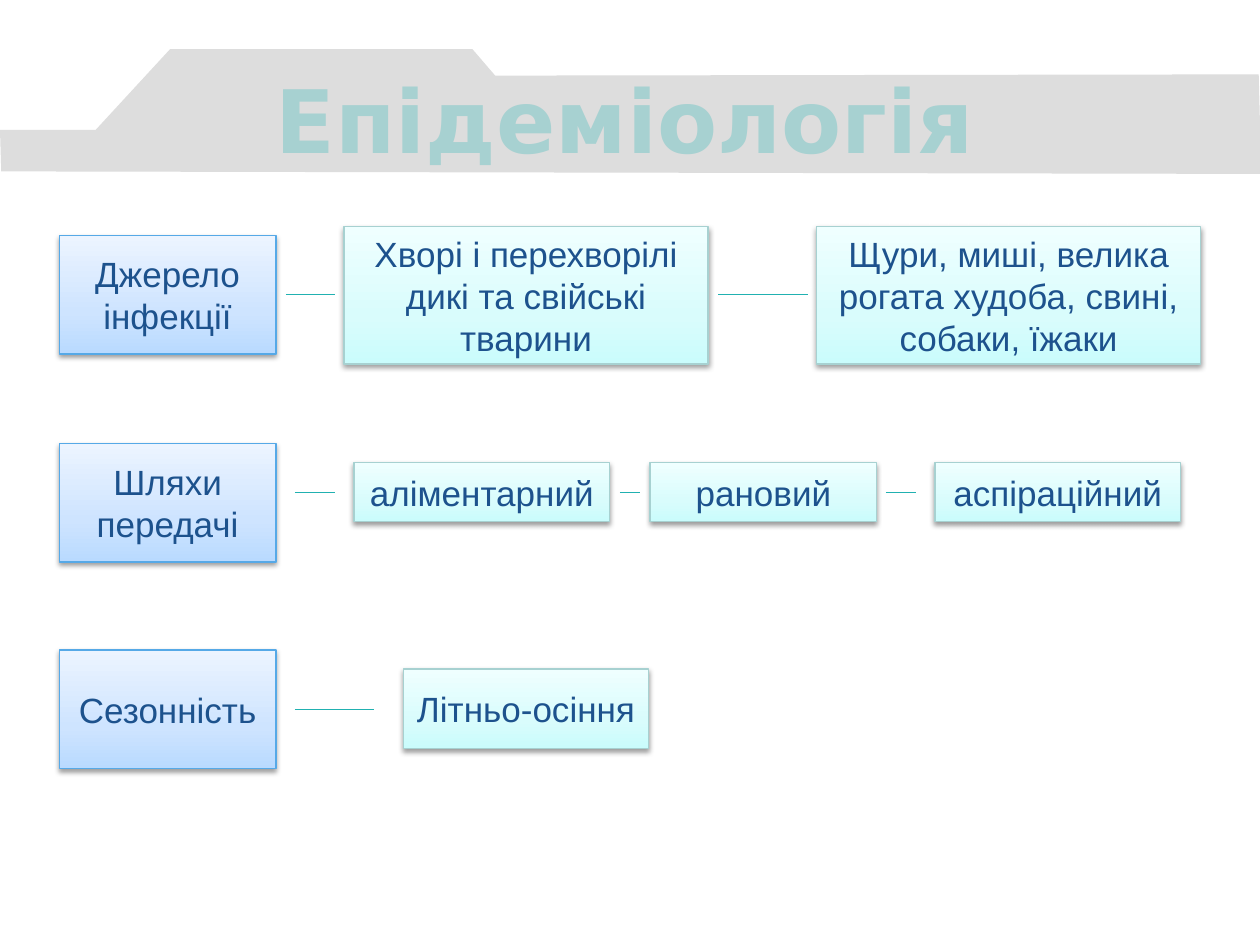
from lxml import etree
from pptx import Presentation
from pptx.dml.color import RGBColor
from pptx.enum.shapes import MSO_CONNECTOR, MSO_SHAPE
from pptx.enum.text import MSO_ANCHOR, MSO_AUTO_SIZE, PP_ALIGN
from pptx.oxml import parse_xml
from pptx.oxml.ns import nsdecls, qn
from pptx.util import Inches, Pt

COLORS = {
    "band": "DDDDDD",
    "title": "A7D1D1",
    "text": "1D528D",
    "link": "21B1B1",
}
# Border, then the gradient stops from bottom to top
TOPIC = ("56A9E7", {0: "B9DAFF", 35: "CEE4FF", 100: "ECF4FF"})
DETAIL = ("A7D1D1", {0: "CAFCFC", 35: "D9FCFC", 100: "EFFFFF"})


def write(frame, text, font_name, size, color, bold=False):
    frame.word_wrap = True
    frame.auto_size = MSO_AUTO_SIZE.NONE
    frame.vertical_anchor = MSO_ANCHOR.MIDDLE
    paragraph = frame.paragraphs[0]
    paragraph.alignment = PP_ALIGN.CENTER
    run = paragraph.add_run()
    run.text = text
    run.font.name = font_name
    run.font.size = Pt(size)
    run.font.bold = bold
    run.font.color.rgb = RGBColor.from_string(color)


def add_card(text, left, top, width, height, style):
    border, stops = style
    card = slide.shapes.add_shape(
        MSO_SHAPE.RECTANGLE, Inches(left), Inches(top), Inches(width), Inches(height))
    stop_xml = "".join(
        f'<a:gs pos="{position * 1000}"><a:srgbClr val="{color}"/></a:gs>'
        for position, color in stops.items())
    properties = card._element.spPr
    properties.append(parse_xml(
        f'<a:gradFill {nsdecls("a")} rotWithShape="1"><a:gsLst>{stop_xml}</a:gsLst>'
        '<a:lin ang="16200000" scaled="0"/></a:gradFill>'))
    card.line.color.rgb = RGBColor.from_string(border)
    card.line.width = Pt(0.75)
    # Soft shadow straight below
    card.shadow.inherit = False
    properties.find(qn("a:effectLst")).append(parse_xml(
        f'<a:outerShdw {nsdecls("a")} blurRad="{Pt(3.1)}" dist="{Pt(1.6)}" '
        'dir="5400000" rotWithShape="0"><a:srgbClr val="000000">'
        '<a:alpha val="38000"/></a:srgbClr></a:outerShdw>'))
    write(card.text_frame, text, "Arial", 20, COLORS["text"])


prs = Presentation()
prs.slide_width, prs.slide_height = Inches(10), Inches(7.5)
slide = prs.slides.add_slide(prs.slide_layouts[5])

# Header band, behind the title
outline = [(0, 1.03), (0.76, 1.03), (1.35, 0.39), (3.75, 0.39),
           (3.93, 0.6), (9.99, 0.59), (10.01, 1.38), (0.01, 1.36)]
points = [(Inches(x), Inches(y)) for x, y in outline]
builder = slide.shapes.build_freeform(*points[0])
builder.add_line_segments(points[1:], close=True)
band = builder.convert_to_shape()
band.fill.solid()
band.fill.fore_color.rgb = RGBColor.from_string(COLORS["band"])
band.line.fill.background()
band.shadow.inherit = False
slide.shapes._spTree.insert(2, band._element)

# Title
title = slide.shapes.title
title.left, title.top = Inches(0.67), Inches(0.63)
title.width, title.height = Inches(8.58), Inches(0.62)
write(title.text_frame, "Епідеміологія", "DejaVu Sans", 50, COLORS["title"], bold=True)

# Each row: topic, its top, top and height of the details,
# details (text, left, width), height of the links, links (from, to)
rows = [
    ("Джерело інфекції", 1.87, 1.8, 1.09,
     [("Хворі і перехворілі дикі та свійські тварини", 2.73, 2.89),
      ("Щури, миші, велика рогата худоба, свині, собаки, їжаки", 6.48, 3.05)],
     2.34, [(2.27, 2.66), (5.7, 6.41)]),
    ("Шляхи передачі", 3.52, 3.67, 0.47,
     [("аліментарний", 2.81, 2.03), ("рановий", 5.16, 1.8), ("аспіраційний", 7.42, 1.95)],
     3.91, [(2.34, 2.66), (4.92, 5.08), (7.03, 7.27)]),
    ("Сезонність", 5.16, 5.31, 0.63,
     [("Літньо-осіння", 3.2, 1.95)],
     5.63, [(2.34, 2.97)]),
]
for topic, topic_top, detail_top, detail_height, details, link_y, links in rows:
    add_card(topic, 0.47, topic_top, 1.72, 0.94, TOPIC)
    for text, left, width in details:
        add_card(text, left, detail_top, width, detail_height, DETAIL)
    for start, end in links:
        link = slide.shapes.add_connector(
            MSO_CONNECTOR.STRAIGHT, Inches(start), Inches(link_y), Inches(end), Inches(link_y))
        link.line.color.rgb = RGBColor.from_string(COLORS["link"])
        link.line.width = Pt(0.75)
        etree.SubElement(link._element.spPr, qn("a:effectLst"))

prs.save("out.pptx")
